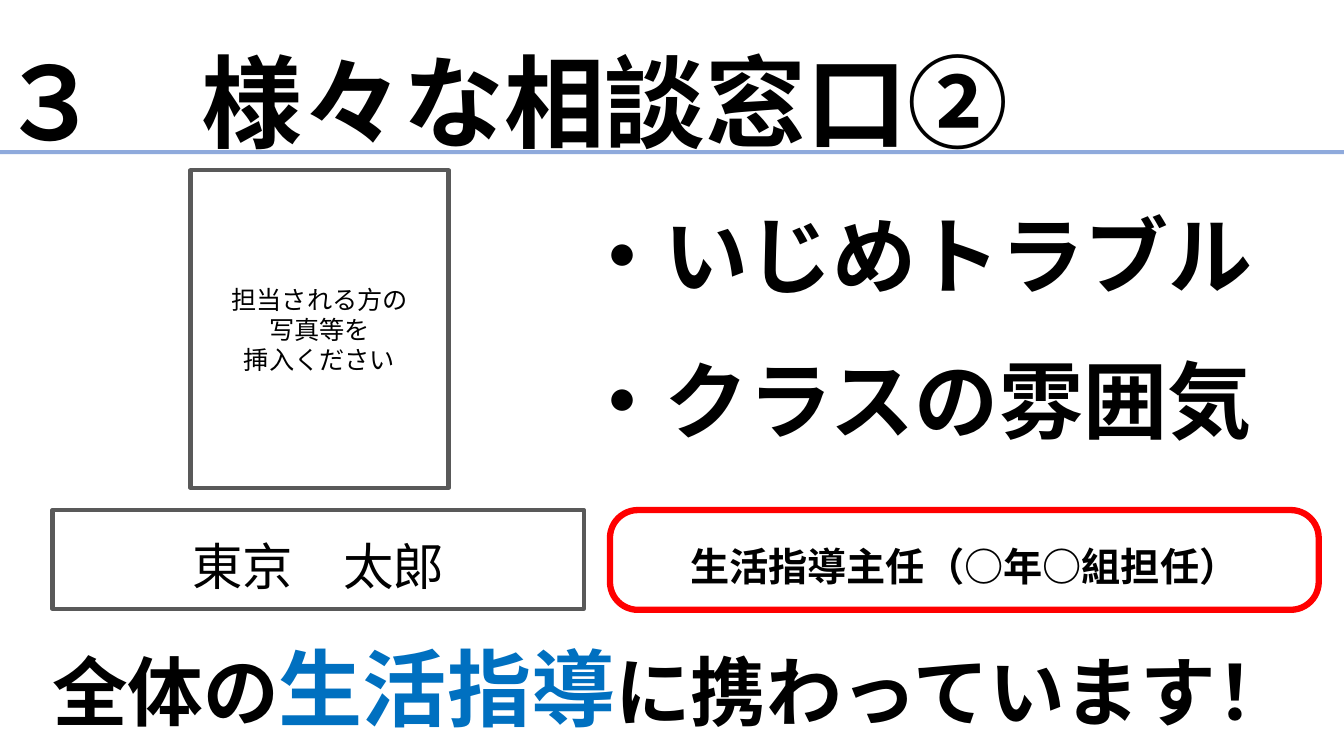
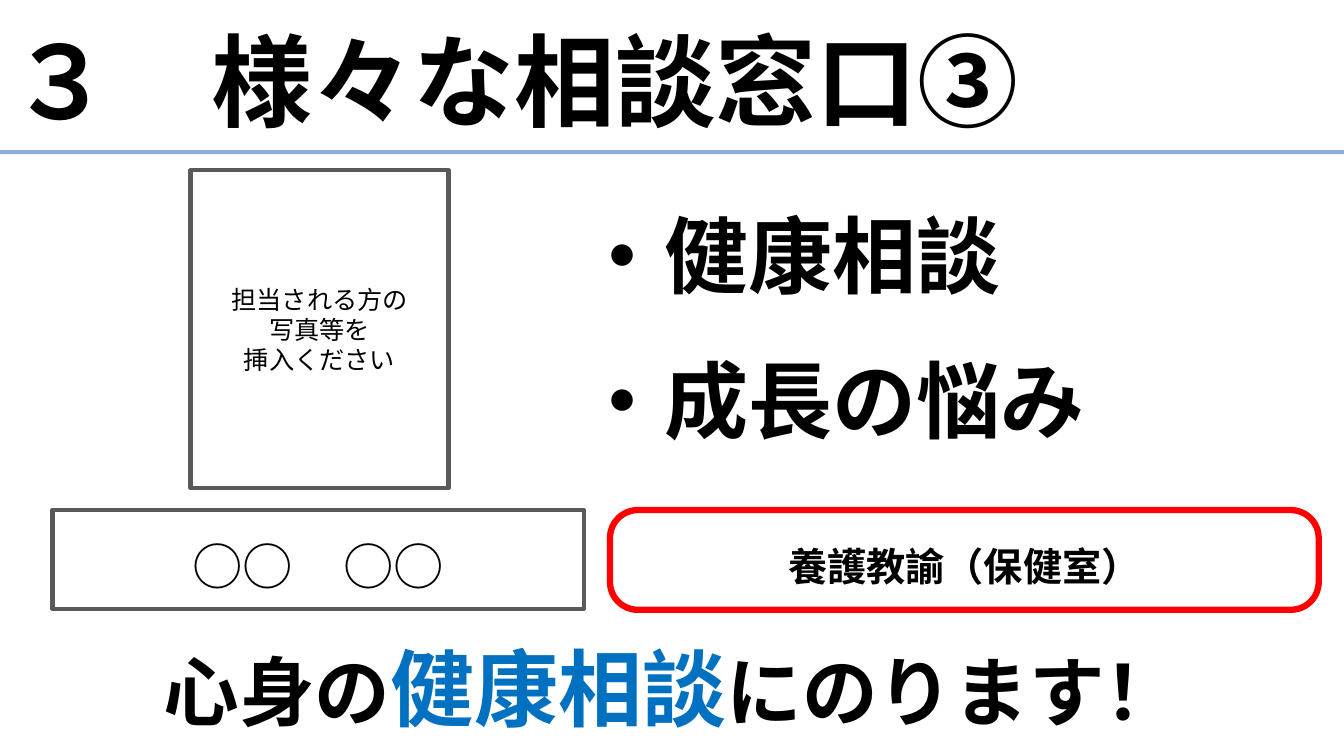
from lxml import etree
from pptx import Presentation
from pptx.dml.color import RGBColor
from pptx.enum.shapes import MSO_SHAPE
from pptx.enum.text import MSO_ANCHOR, MSO_AUTO_SIZE, PP_ALIGN
from pptx.oxml.ns import qn
from pptx.util import Inches, Pt

RECT, ROUND = MSO_SHAPE.RECTANGLE, MSO_SHAPE.ROUNDED_RECTANGLE
LEFT, CENTER = PP_ALIGN.LEFT, PP_ALIGN.CENTER
MIDDLE, BOTTOM = MSO_ANCHOR.MIDDLE, MSO_ANCHOR.BOTTOM
FONT = "Noto Sans CJK JP"
BLACK, WHITE, GRAY = "000000", "FFFFFF", "595959"
RED, BLUE, BAND = "FF0000", "0070C0", "8FAADC"
SLIDE_W, SLIDE_H = 13.33, 7.5
TITLE_SIZE = (12.3, 1.73)
BADGE_TOP, BADGE_INSET = 5.06, 0.16

PHOTO_NOTE = ["担当される方の", "写真等を", "挿入ください"]
SLIDES = [
    {
        "title": "３　様々な相談窓口②",
        "title_at": (-0.1, 0.2),
        "topics": ["・いじめトラブル", "・クラスの雰囲気"],
        "name": "東京　太郎",
        "role": "生活指導主任（○年○組担任）",
        "message": ("全体の", "生活指導", "に携わっています！"),
    },
    {
        "title": "３　様々な相談窓口③",
        "title_at": (0, 0),
        "topics": ["・健康相談", "・成長の悩み"],
        "name": "○○　○○",
        "role": "養護教諭（保健室）",
        "message": ("心身の", "健康相談", "にのります！"),
    },
]


def rgb(color):
    return RGBColor.from_string(color)


def style_run(r, size, bold=False, color=BLACK):
    r.font.size, r.font.bold, r.font.name = Pt(size), bold, FONT
    r.font.color.rgb = rgb(color)
    ea = etree.Element(qn("a:ea"), typeface=FONT)
    r.font._element.find(qn("a:latin")).addnext(ea)


def write(s, lines, size, bold=False, align=CENTER, anchor=MIDDLE, spacing=None, before=0):
    """Fill a shape with one paragraph per line, all in one style."""
    tf = s.text_frame
    tf.word_wrap, tf.auto_size, tf.vertical_anchor = True, MSO_AUTO_SIZE.NONE, anchor
    tf.text = "\n".join(lines)
    for i, p in enumerate(tf.paragraphs):
        p.alignment, p.line_spacing = align, spacing
        p.space_before = Pt(before if i else 0)
        for r in p.runs:
            style_run(r, size, bold)


def add_box(slide, at, kind=RECT, fill=WHITE, line=None, weight=3):
    s = slide.shapes.add_shape(kind, *map(Inches, at))
    s.shadow.inherit = False
    s.fill.solid()
    s.fill.fore_color.rgb = rgb(fill)
    if line:
        s.line.color.rgb, s.line.width = rgb(line), Pt(weight)
    else:
        s.line.fill.background()
    return s


def add_text(slide, at):
    return slide.shapes.add_textbox(*map(Inches, at))


def add_title(slide, text, at):
    s = slide.shapes.title
    s.left, s.top, s.width, s.height = map(Inches, (*at, *TITLE_SIZE))
    write(s, [text], 72, bold=True, align=LEFT, spacing=0.9)


def add_message(slide, parts):
    """Closing line whose middle part is larger and blue."""
    s = add_text(slide, (0, 5.87, SLIDE_W, 1.51))
    write(s, [""], 54, anchor=BOTTOM, spacing=0.9)
    p = s.text_frame.paragraphs[0]
    for text, size, color in zip(parts, (54, 60, 54), (BLACK, BLUE, BLACK)):
        r = p.add_run()
        r.text = text
        style_run(r, size, True, color)


def build_slide(prs, content):
    slide = prs.slides.add_slide(prs.slide_layouts[5])
    add_box(slide, (0, 1.49, SLIDE_W, 0.04), fill=BAND)
    add_title(slide, content["title"], content["title_at"])

    photo = add_box(slide, (1.89, 1.69, 2.56, 3.15), line=GRAY)
    write(photo, PHOTO_NOTE, 18, spacing=Pt(21.5))

    topics = add_text(slide, (5.66, 1.63, 7.17, 3.13))
    write(topics, content["topics"], 60, bold=True, align=LEFT, spacing=Pt(78), before=26)

    name = add_box(slide, (0.52, BADGE_TOP, 5.27, 0.98), line=GRAY)
    write(name, [content["name"]], 36)
    role = add_box(slide, (6.05, BADGE_TOP, 7.03, 0.99), ROUND, line=RED, weight=4.5)
    role.adjustments[0] = 0.28
    write(role, [content["role"]], 28, bold=True)
    for badge in (name, role):
        badge.text_frame.margin_top = Inches(BADGE_INSET)

    add_message(slide, content["message"])


def main():
    prs = Presentation()
    prs.slide_width, prs.slide_height = Inches(SLIDE_W), Inches(SLIDE_H)
    for content in SLIDES:
        build_slide(prs, content)
    prs.save("out.pptx")


if __name__ == "__main__":
    main()
